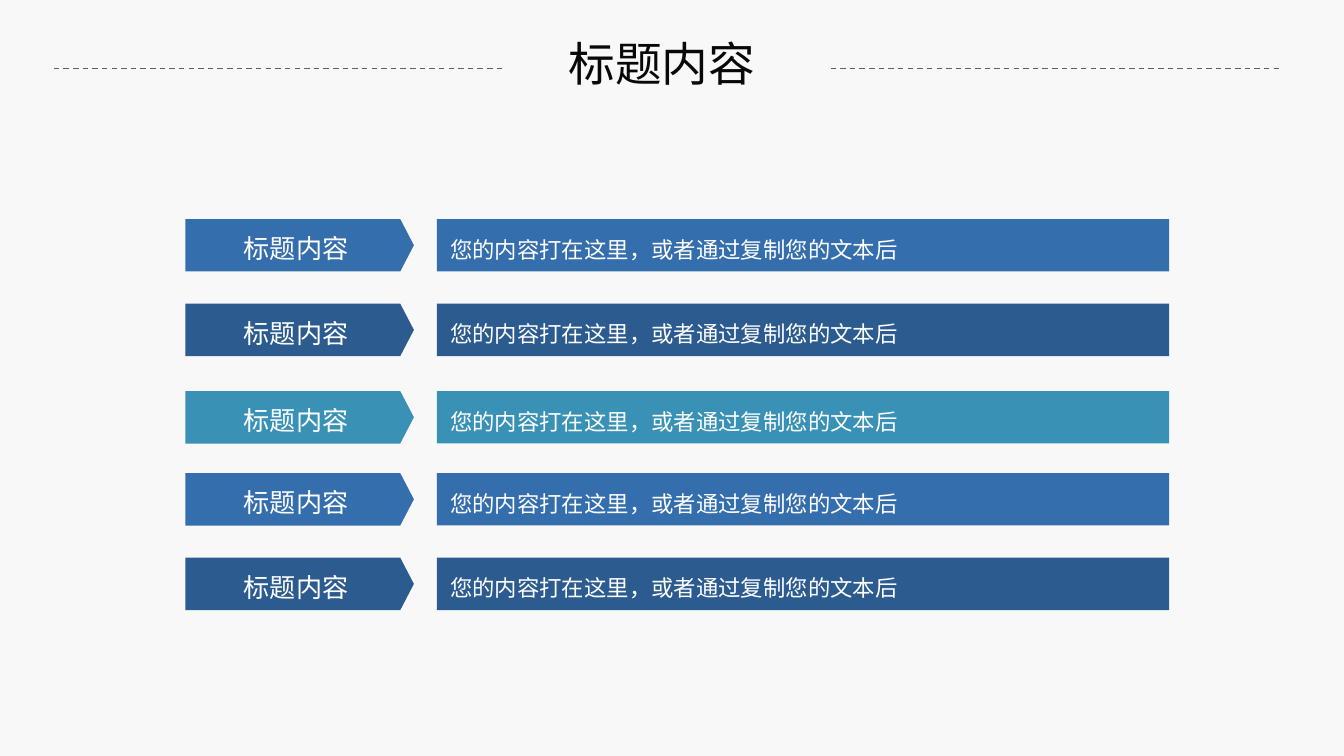
from dataclasses import dataclass

from lxml.etree import SubElement
from pptx import Presentation
from pptx.dml.color import RGBColor
from pptx.enum.dml import MSO_LINE_DASH_STYLE as Dash
from pptx.enum.shapes import MSO_CONNECTOR as Connector, MSO_SHAPE as Shape
from pptx.enum.text import MSO_ANCHOR as Anchor, PP_ALIGN as Align
from pptx.oxml.ns import qn
from pptx.util import Emu, Inches, Pt


@dataclass(frozen=True)
class Theme:
    font: str = "Noto Sans CJK SC"
    background: str = "F8F8F8"
    title: str = "080808"
    rule: str = "5F5F5F"
    on_fill: str = "FFFFFF"
    blue: str = "356EAD"
    navy: str = "2C5B8F"
    teal: str = "3992B5"
    title_size: float = 25
    label_size: float = 14
    body_size: float = 12
    rule_width: float = 0.75


@dataclass(frozen=True)
class Row:
    fill: str
    nudge: float = 0  # grid rows below the regular pitch
    label: str = "标题内容"
    body: str = "您的内容打在这里，或者通过复制您的文本后"


@dataclass(frozen=True)
class Area:
    """Columns and rows of the slide grid."""
    left: float
    top: float
    width: float
    height: float

    def box(self) -> tuple[Emu, ...]:
        return tuple(cells(v) for v in (self.left, self.top, self.width, self.height))


THEME = Theme()
WIDTH = Inches(10)
HEIGHT = Emu(WIDTH * 9 // 16)
COLUMNS = 100  # square cells, so rows have the same size
FIRST_ROW, ROW_PITCH, ROW_HEIGHT = 16.3, 6.3, 3.9
RULE_ROW, RULE_LENGTH = 5.1, 33.4
RULE_LEFTS = (4, 61.8)
ROWS = (
    Row(THEME.blue),
    Row(THEME.navy),
    Row(THEME.teal, nudge=0.2),
    Row(THEME.blue),
    Row(THEME.navy),
)


def cells(count: float) -> Emu:
    return Emu(round(WIDTH * count / COLUMNS))


def write(tf, text: str, size: float, color: str, align: Align, spacing: float) -> None:
    p = tf.paragraphs[0]
    p.text, p.alignment, p.line_spacing = text, align, spacing
    font = p.font
    font.size, font.name = Pt(size), THEME.font
    font.color.rgb = RGBColor.from_string(color)
    # East Asian glyphs take their own typeface entry
    SubElement(p._p.pPr.find(qn("a:defRPr")), qn("a:ea"), typeface=THEME.font)


def add_title(s, text: str, area: Area) -> None:
    tf = s.shapes.add_textbox(*area.box()).text_frame
    tf.word_wrap = True
    write(tf, text, THEME.title_size, THEME.title, Align.CENTER, 1.0)


def add_rule(s, left: float) -> None:
    y = cells(RULE_ROW)
    line = s.shapes.add_connector(
        Connector.STRAIGHT, cells(left), y, cells(left + RULE_LENGTH), y)
    line.line.color.rgb = RGBColor.from_string(THEME.rule)
    line.line.width = Pt(THEME.rule_width)
    line.line.dash_style = Dash.DASH
    SubElement(line._element.spPr, qn("a:effectLst"))


def add_panel(s, kind: Shape, area: Area, fill: str, text: str, size: float,
              align: Align, spacing: float):
    sp = s.shapes.add_shape(kind, *area.box())
    sp.shadow.inherit = False
    sp.fill.solid()
    sp.fill.fore_color.rgb = RGBColor.from_string(fill)
    sp.line.fill.background()
    tf = sp.text_frame
    tf.word_wrap, tf.vertical_anchor = True, Anchor.MIDDLE
    write(tf, text, size, THEME.on_fill, align, spacing)
    return sp


def add_row(s, index: int, row: Row) -> None:
    top = FIRST_ROW + index * ROW_PITCH + row.nudge
    add_panel(s, Shape.RECTANGLE, Area(32.5, top, 54.5, ROW_HEIGHT), row.fill,
              row.body, THEME.body_size, Align.LEFT, 1.3)
    tag = add_panel(s, Shape.PENTAGON, Area(13.8, top, 17, ROW_HEIGHT), row.fill,
                    row.label, THEME.label_size, Align.CENTER, 1.2)
    tag.adjustments[0] = 0.26


def main() -> None:
    prs = Presentation()
    prs.slide_width, prs.slide_height = WIDTH, HEIGHT
    s = prs.slides.add_slide(prs.slide_layouts[6])
    s.background.fill.solid()
    s.background.fill.fore_color.rgb = RGBColor.from_string(THEME.background)

    # Heading between two dashed rules
    add_title(s, "标题内容", Area(40.6, 2.1, 17.3, 5.2))
    for left in RULE_LEFTS:
        add_rule(s, left)

    # Label and content rows
    for index, row in enumerate(ROWS):
        add_row(s, index, row)

    prs.save("out.pptx")


if __name__ == "__main__":
    main()
